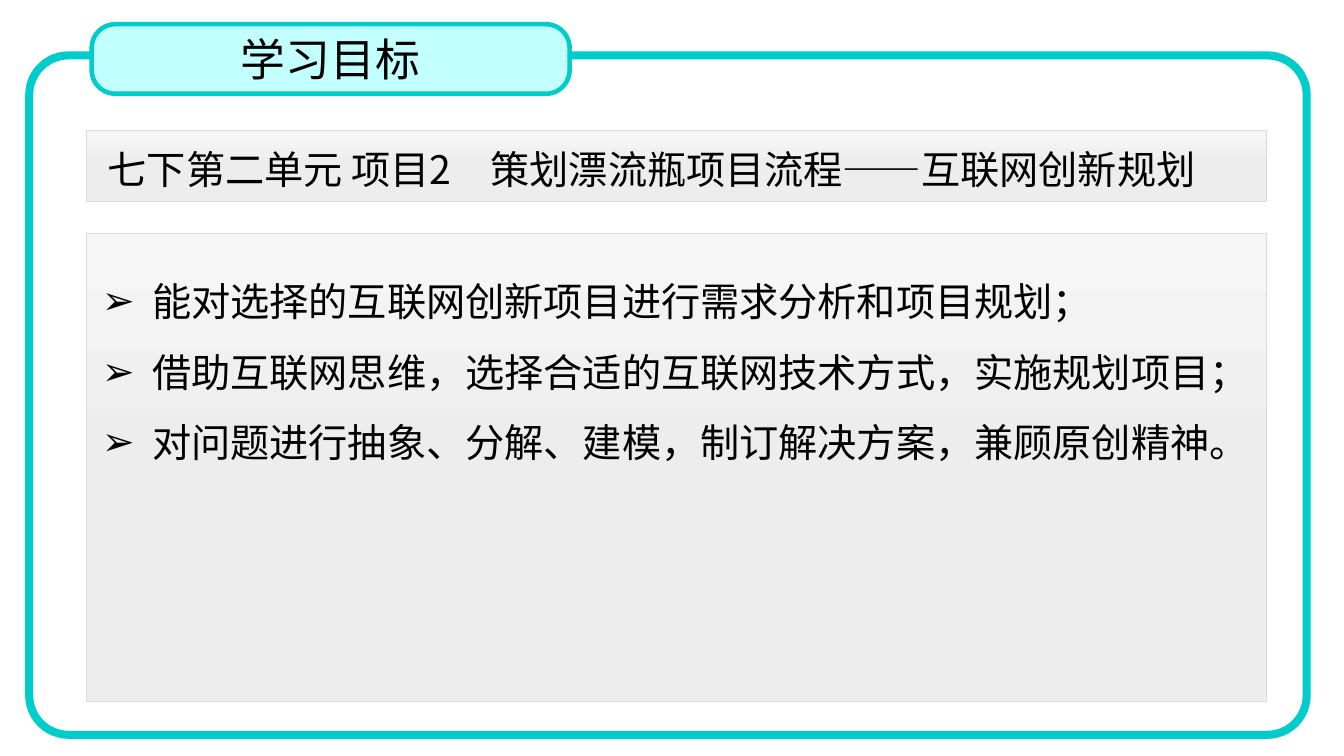
from copy import deepcopy
from dataclasses import dataclass

from lxml import etree
from pptx import Presentation
from pptx import util as u
from pptx.dml.color import RGBColor
from pptx.enum import shapes, text
from pptx.oxml import ns

COLORS = {
    "ink": "000000",
    "teal": "00CCCC",
    "tab": "C2FFFF",
    "panel_top": "F6F6F6",
    "panel_middle": "EDEDED",
    "panel_bottom": "EBEBEB",
    "panel_edge": "DBDBDB",
}
CJK_FONT = "Noto Sans CJK SC"
PANEL_STOPS = [(0, "panel_top"), (0.5, "panel_middle"), (1, "panel_bottom")]
GOALS = [
    "能对选择的互联网创新项目进行需求分析和项目规划；",
    "借助互联网思维，选择合适的互联网技术方式，实施规划项目；",
    "对问题进行抽象、分解、建模，制订解决方案，兼顾原创精神。",
]


@dataclass
class Box:
    left: float
    top: float
    width: float
    height: float

    def lengths(self) -> list:
        return [u.Inches(n) for n in (self.left, self.top, self.width, self.height)]


@dataclass
class Block:
    box: Box
    edge: str
    weight: float
    fill: str = ""      # a colour name, "panel" for the gradient, or empty
    corner: float = 0   # zero means a plain rectangle


TAB = Box(0.91, 0.24, 4.74, 0.69)
BLOCKS = [
    Block(Box(0.86, 2.32, 11.7, 4.64), "panel_edge", 0.5, "panel"),
    Block(Box(0.86, 1.29, 11.7, 0.71), "panel_edge", 0.5, "panel"),
    Block(Box(0.29, 0.55, 12.67, 6.74), "teal", 5.75, corner=0.058),
    Block(TAB, "teal", 3.25, "tab", 0.341),
]


def color(name: str) -> RGBColor:
    return RGBColor.from_string(COLORS[name])


def fill_panel(fill, element) -> None:
    """Fill a panel with its three-step vertical gradient."""
    fill.gradient()
    fill.gradient_angle = 270
    stop_list = element.find(".//" + ns.qn("a:gsLst"))
    stop_list.insert(1, deepcopy(stop_list[0]))
    for stop, (position, name) in zip(fill.gradient_stops, PANEL_STOPS):
        stop.position = position
        stop.color.rgb = color(name)


def draw_block(page, block: Block) -> None:
    kind = shapes.MSO_SHAPE.ROUNDED_RECTANGLE if block.corner else shapes.MSO_SHAPE.RECTANGLE
    shape = page.shapes.add_shape(kind, *block.box.lengths())
    shape.shadow.inherit = False
    if block.corner:
        shape.adjustments[0] = block.corner
    if block.fill == "panel":
        fill_panel(shape.fill, shape._element)
    elif block.fill:
        shape.fill.solid()
        shape.fill.fore_color.rgb = color(block.fill)
    else:
        shape.fill.background()
    shape.line.color.rgb = color(block.edge)
    shape.line.width = u.Pt(block.weight)


def write_text(shape, box: Box, lines: list[str], *, size: float = 28,
               font: str = CJK_FONT, spacing: float = 1.5, bullet: str = "",
               align=text.PP_ALIGN.LEFT, anchor=text.MSO_ANCHOR.TOP) -> None:
    """Place a text shape and write one paragraph per line."""
    shape.left, shape.top, shape.width, shape.height = box.lengths()
    frame = shape.text_frame
    frame.word_wrap = True
    frame.auto_size = text.MSO_AUTO_SIZE.NONE
    frame.vertical_anchor = anchor
    for index, line in enumerate(lines):
        para = frame.add_paragraph() if index else frame.paragraphs[0]
        para.alignment = align
        para.line_spacing = spacing
        para.space_before = u.Pt(0)
        if bullet:
            properties = para._p.get_or_add_pPr()
            properties.set("marL", str(u.Inches(0.5)))
            properties.set("indent", str(u.Inches(-0.5)))
            etree.SubElement(properties, ns.qn("a:buFont")).set("typeface", "Arial")
            etree.SubElement(properties, ns.qn("a:buChar")).set("char", bullet)
        span = para.add_run()
        span.text = line
        span.font.size = u.Pt(size)
        span.font.name = font
        span.font.color.rgb = color("ink")
        east_asian = etree.SubElement(span.font._element, ns.qn("a:ea"))
        east_asian.set("typeface", CJK_FONT)
        span.font._element.find(ns.qn("a:latin")).addnext(east_asian)


def main() -> None:
    deck = Presentation()
    deck.slide_width, deck.slide_height = u.Inches(13.33), u.Inches(7.5)
    page = deck.slides.add_slide(deck.slide_layouts[1])
    title, body = page.shapes.title, page.placeholders[1]

    # Panels, frame and title tab
    for block in BLOCKS:
        draw_block(page, block)

    # Title, on top of its tab
    page.shapes._spTree.append(title._element)
    write_text(title, TAB, ["学习目标"], size=32, font="Arial", spacing=1,
               align=text.PP_ALIGN.CENTER, anchor=text.MSO_ANCHOR.MIDDLE)

    # Unit heading
    heading_box = Box(0.97, 1.16, 11.59, 0.81)
    heading = page.shapes.add_textbox(*heading_box.lengths())
    write_text(heading, heading_box, ["七下第二单元 项目2　策划漂流瓶项目流程——互联网创新规划"])

    # Learning goals
    page.shapes._spTree.append(body._element)
    write_text(body, Box(0.91, 2.47, 11.59, 3.63), GOALS, bullet="➢")

    deck.save("out.pptx")


if __name__ == "__main__":
    main()
